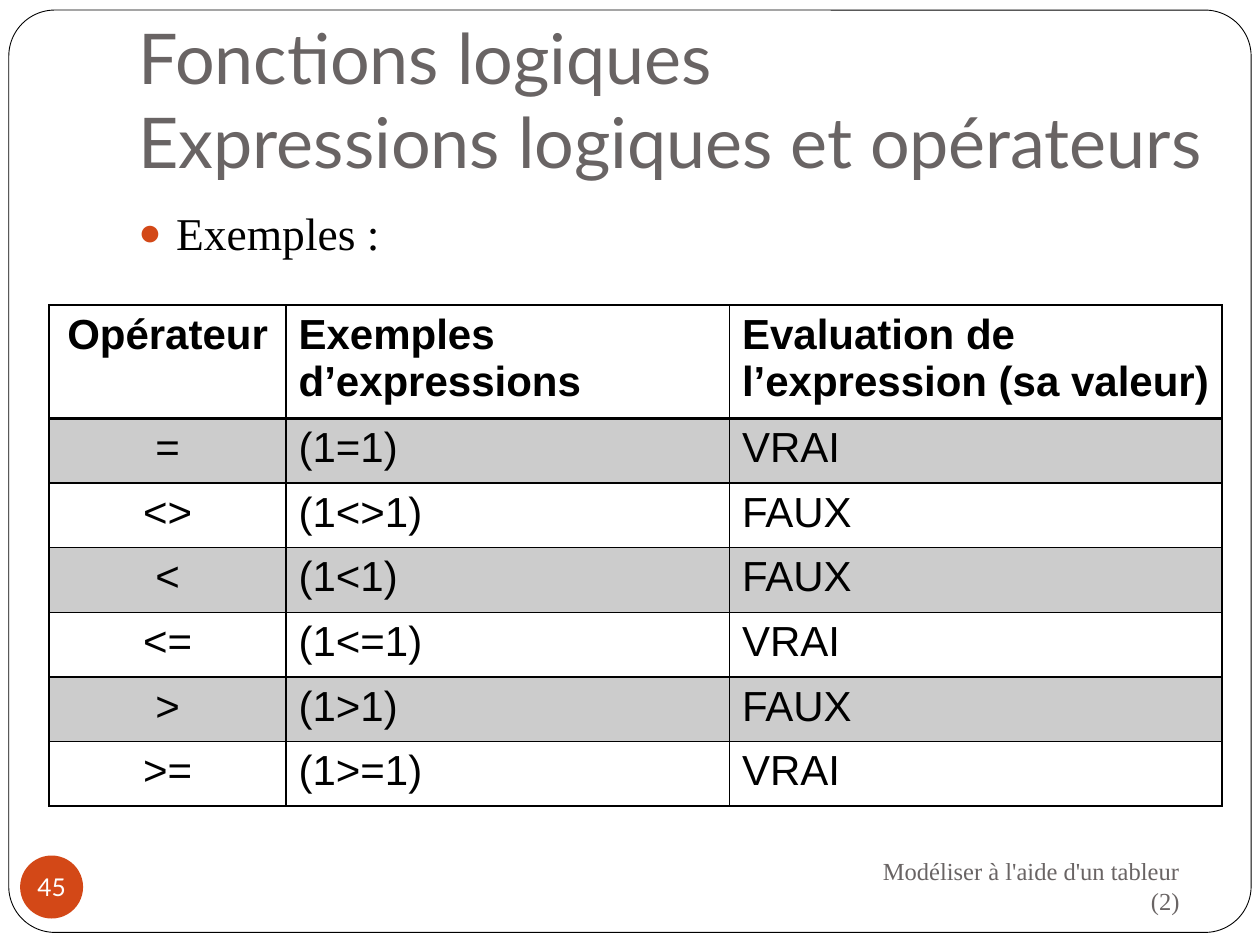
"""Build a slide on logical operators with a table of examples."""
from typing import Any, NamedTuple

from lxml.etree import SubElement as Sub
from pptx import Presentation
from pptx.dml.color import RGBColor as Rgb
from pptx.enum.shapes import MSO_SHAPE as Kind
from pptx.enum.text import MSO_ANCHOR as Anchor, MSO_AUTO_SIZE as Fit, PP_ALIGN as Align
from pptx.oxml.ns import qn
from pptx.util import Inches, Pt

COLS, ROWS = 100, 75
UNIT = Inches(10) // COLS
BLACK, WHITE, GREY, RED = "000000", "FFFFFF", "696464", "D34817"


class Box(NamedTuple):
    """Left, top, width and height in grid units."""
    x: float
    y: float
    w: float
    h: float


class Font(NamedTuple):
    """Face, size in points, colour and weight."""
    face: str
    size: float
    tint: str
    bold: bool = False


class Row(NamedTuple):
    """An operator, a sample of its use and the result."""
    sign: str
    sample: str
    value: str


HEAD = Row("Opérateur", "Exemples d’expressions", "Evaluation de l’expression (sa valeur)")
BODY = [
    Row("=", "(1=1)", "VRAI"),
    Row("<>", "(1<>1)", "FAUX"),
    Row("<", "(1<1)", "FAUX"),
    Row("<=", "(1<=1)", "VRAI"),
    Row(">", "(1>1)", "FAUX"),
    Row(">=", "(1>=1)", "VRAI"),
]
WIDTHS = (18.8, 35.2, 39.1)
HIGH, LOW = 8.5, 5.13


def span(n: float) -> int:
    """Turn grid units into a length."""
    return round(n * UNIT)


def place(box: Box) -> list[int]:
    """Turn a grid box into lengths."""
    return [span(n) for n in box]


def hue(tint: str) -> Rgb:
    """Turn a hex string into a colour."""
    return Rgb.from_string(tint)


def write(frame: Any, text: str, font: Font, align: Align = Align.LEFT) -> None:
    """Set the text of a frame and format its runs."""
    frame.text = text
    frame.word_wrap = True
    for par in frame.paragraphs:
        par.alignment = align
        for run in par.runs:
            run.font.name, run.font.size, run.font.bold = font.face, Pt(font.size), font.bold
            run.font.color.rgb = hue(font.tint)


def inset(frame: Any, left: float, top: float, right: float, low: float) -> None:
    """Set the four margins of a frame in grid units."""
    frame.margin_left, frame.margin_top = span(left), span(top)
    frame.margin_right, frame.margin_bottom = span(right), span(low)


def add_form(slide: Any, kind: Kind, box: Box, fill: str) -> Any:
    """Add a filled shape with no shadow and no line."""
    form = slide.shapes.add_shape(kind, *place(box))
    form.shadow.inherit = False
    form.fill.solid()
    form.fill.fore_color.rgb = hue(fill)
    form.line.fill.background()
    return form


def add_text(slide: Any, box: Box, text: str, font: Font, align: Align = Align.LEFT) -> Any:
    """Add a text box and return its frame."""
    frame = slide.shapes.add_textbox(*place(box)).text_frame
    write(frame, text, font, align)
    return frame


def add_dot(par: Any, tint: str) -> None:
    """Give a paragraph a hanging round bullet."""
    props = par._p.get_or_add_pPr()
    props.set("marL", str(span(3)))
    props.set("indent", str(-span(3)))
    Sub(Sub(props, qn("a:buClr")), qn("a:srgbClr"), val=tint)
    Sub(props, qn("a:buSzPct"), val="85000")
    Sub(props, qn("a:buFont"), typeface="Arial")
    Sub(props, qn("a:buChar"), char="●")


def add_edges(cell: Any, top: float, low: float) -> None:
    """Draw the four borders of a cell."""
    props = cell._tc.get_or_add_tcPr()
    for side, width in zip("LRTB", (1, 1, top, low)):
        line = Sub(props, qn(f"a:ln{side}"), w=str(Pt(width)))
        Sub(Sub(line, qn("a:solidFill")), qn("a:srgbClr"), val=BLACK)


def shade(cell: Any, dark: bool) -> None:
    """Fill a cell with one fifth black, or leave it clear."""
    if not dark:
        cell.fill.background()
        return
    cell.fill.solid()
    cell.fill.fore_color.rgb = hue(BLACK)
    tint = cell._tc.tcPr.find(f"{qn('a:solidFill')}/{qn('a:srgbClr')}")
    Sub(tint, qn("a:alpha"), val="20000")


def add_grid(slide: Any, x: float, y: float) -> None:
    """Add the table of operators."""
    data = [HEAD, *BODY]
    box = Box(x, y, sum(WIDTHS), HIGH + LOW * len(BODY))
    table = slide.shapes.add_table(len(data), len(WIDTHS), *place(box)).table
    table.first_row = table.horz_banding = False
    for col, width in zip(table.columns, WIDTHS):
        col.width = span(width)
    for r, row in enumerate(data):
        table.rows[r].height = span(LOW if r else HIGH)
        for c, text in enumerate(row):
            cell = table.cell(r, c)
            align = Align.LEFT if c else Align.CENTER
            write(cell.text_frame, text, Font("Arial", 24, BLACK, r == 0), align)
            add_edges(cell, 2 if r == 1 else 1, 1 if r else 2)
            shade(cell, r % 2 == 1)


def main() -> None:
    """Build and save the slide."""
    deck = Presentation()
    deck.slide_width, deck.slide_height = UNIT * COLS, UNIT * ROWS
    slide = deck.slides.add_slide(deck.slide_layouts[5])

    edge = add_form(slide, Kind.ROUNDED_RECTANGLE, Box(0.7, 0.8, 98.6, 73.2), WHITE)
    edge.adjustments[0] = 0.05
    edge.line.color.rgb = hue(BLACK)
    edge.line.width = Pt(0.5)
    slide.shapes._spTree.insert(2, edge._element)

    title = slide.shapes.title
    title.left, title.top, title.width, title.height = place(Box(10, 3, 100.6, 12.5))
    head = title.text_frame
    write(head, "Fonctions logiques\vExpressions logiques et opérateurs", Font("Lato", 40, GREY))
    head.auto_size, head.vertical_anchor = Fit.NONE, Anchor.BOTTOM
    inset(head, 1, 0.5, 1, 1)

    lead = add_text(slide, Box(10, 15.8, 85, 50), "Exemples :", Font("Times New Roman", 26, BLACK))
    lead.paragraphs[0].space_before = Pt(5.8)
    add_dot(lead.paragraphs[0], RED)

    foot = add_text(slide, Box(67.5, 67.7, 27.1, 5.2), "Modéliser à l'aide d'un tableur (2)",
                    Font("Times New Roman", 14, GREY), Align.RIGHT)
    foot.vertical_anchor = Anchor.MIDDLE

    page = add_form(slide, Kind.OVAL, Box(1.6, 67.9, 5, 5), RED).text_frame
    write(page, "45", Font("Lato", 14, WHITE), Align.CENTER)
    page.word_wrap, page.vertical_anchor = False, Anchor.MIDDLE
    inset(page, 0, 0, 0, 0)

    add_grid(slide, 3.9, 24.2)
    deck.save("out.pptx")


if __name__ == "__main__":
    main()
